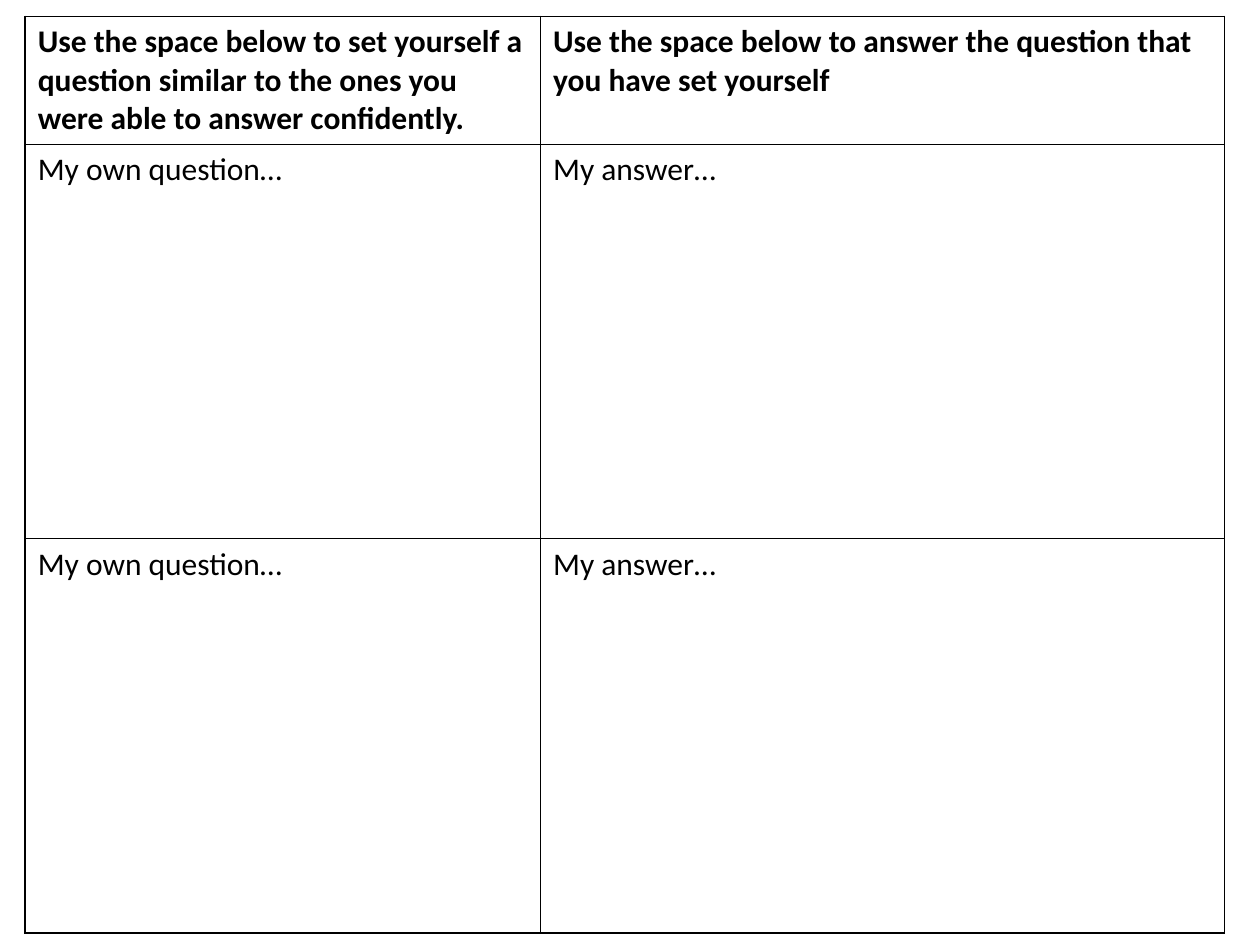
from itertools import product

from lxml.etree import SubElement
from pptx import Presentation
from pptx.dml.color import RGBColor
from pptx.oxml.ns import qn
from pptx.util import Inches, Pt

BLACK = RGBColor(0x00, 0x00, 0x00)
PROMPTS = ("My own question…", "My answer…")
ROWS = [
    (
        "Use the space below to set yourself a question similar to the ones you were able to answer confidently.",
        "Use the space below to answer the question that you have set yourself",
    ),
    PROMPTS,
    PROMPTS,
]
LEFT, TOP = 0.2, 0.13
COLUMN_WIDTHS = (4.09, 5.43)
ROW_HEIGHTS = (1.01, 3.13, 3.13)
TEXT_FORMAT = {"name": "Calibri", "size": Pt(18)}


def add_borders(cell):
    """Draw a thin black line on every side of a cell."""
    properties = cell._tc.get_or_add_tcPr()
    for position, side in enumerate(("a:lnL", "a:lnR", "a:lnT", "a:lnB")):
        border = SubElement(properties, qn(side), w=str(Pt(1)))
        fill = SubElement(border, qn("a:solidFill"))
        SubElement(fill, qn("a:srgbClr"), val=str(BLACK))
        properties.insert(position, border)


def fill_cell(cell, wording, is_heading):
    """Write and format the wording of one cell."""
    cell.fill.background()
    add_borders(cell)
    cell.text = wording
    font = cell.text_frame.paragraphs[0].runs[0].font
    for attribute, value in TEXT_FORMAT.items():
        setattr(font, attribute, value)
    font.bold = is_heading
    font.color.rgb = BLACK


def main():
    """Build the question and answer worksheet."""
    deck = Presentation()
    deck.slide_width, deck.slide_height = Inches(10), Inches(7.5)
    slide = deck.slides.add_slide(deck.slide_layouts[6])
    worksheet = slide.shapes.add_table(
        len(ROW_HEIGHTS), len(COLUMN_WIDTHS),
        Inches(LEFT), Inches(TOP),
        Inches(sum(COLUMN_WIDTHS)), Inches(sum(ROW_HEIGHTS)),
    ).table
    worksheet.horz_banding = False
    for column, width in zip(worksheet.columns, COLUMN_WIDTHS):
        column.width = Inches(width)
    for row, height in zip(worksheet.rows, ROW_HEIGHTS):
        row.height = Inches(height)
    for row, column in product(range(len(ROW_HEIGHTS)), range(len(COLUMN_WIDTHS))):
        fill_cell(worksheet.cell(row, column), ROWS[row][column], row == 0)
    deck.save("out.pptx")


if __name__ == "__main__":
    main()
